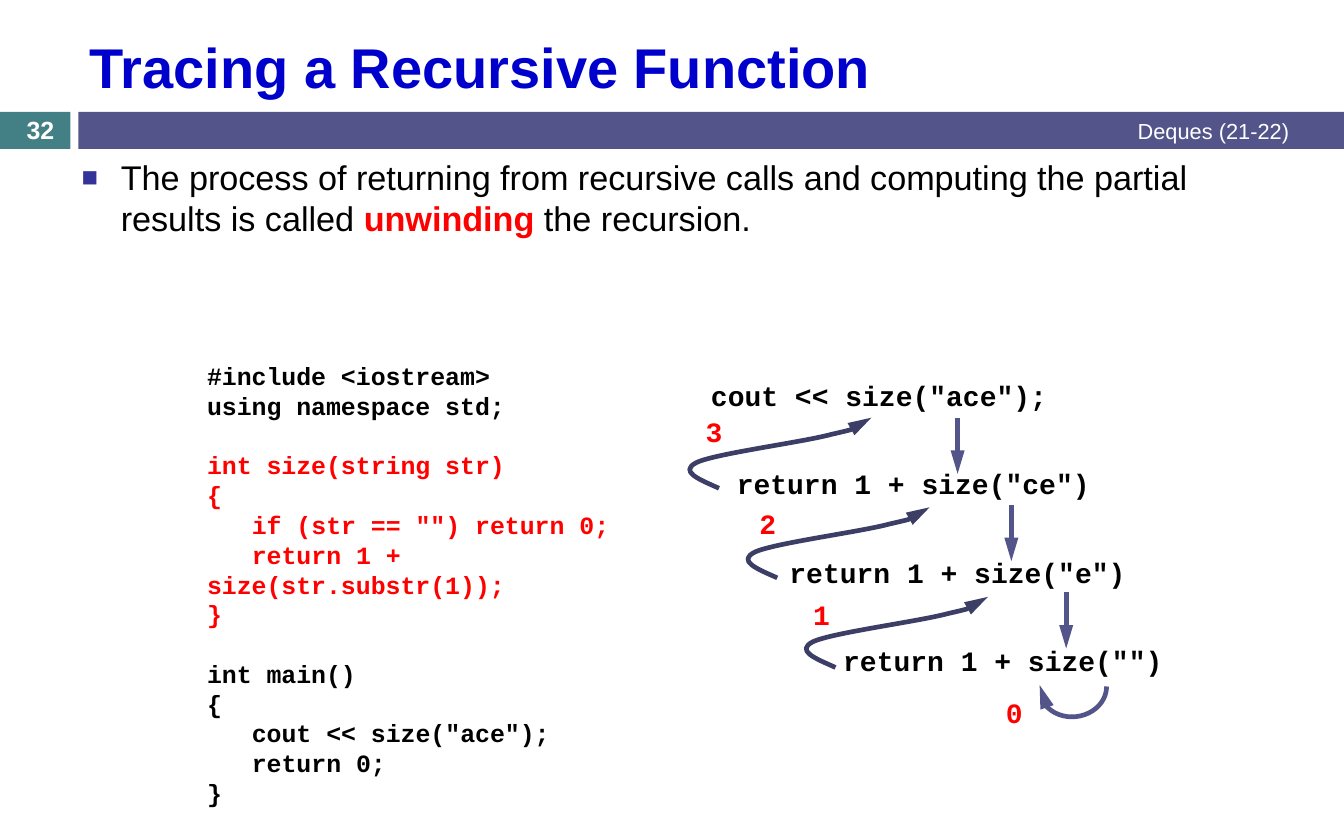
import pptx
import pptx.util
import pptx.dml.color
import pptx.enum.text
import pptx.enum.shapes
from lxml import etree
from pptx.oxml.ns import qn
from pptx.util import Inches, Pt

ALIGN = pptx.enum.text.PP_ALIGN
ANCHOR = pptx.enum.text.MSO_ANCHOR
SHAPE = pptx.enum.shapes.MSO_SHAPE
BLACK, RED, WHITE = "000000", "FF0000", "FFFFFF"
BLUE, TEAL, PURPLE, DARK_PURPLE = "0000CC", "438086", "53548A", "3D3E66"

TITLE = "Tracing a Recursive Function"
BANDS = [(0, 0.63, TEAL), (0.7, 11.3, PURPLE)]  # left, width, fill
STATEMENT = [
    ("The process of returning from recursive calls and computing the partial results is called ", BLACK, False),
    ("unwinding", RED, True),
    (" the recursion.", BLACK, False),
]
CODE_BLOCKS = [  # colour, lines as (indented, text)
    (BLACK, [(False, "#include <iostream>"), (False, "using namespace std;")]),
    (RED, [
        (False, "int size(string str)"),
        (False, "{"),
        (True, 'if (str == "") return 0;'),
        (True, "return 1 + size(str.substr(1));"),
        (False, "}"),
    ]),
    (BLACK, [
        (False, "int main()"),
        (False, "{"),
        (True, 'cout << size("ace");'),
        (True, "return 0;"),
        (False, "}"),
    ]),
]
CALLS = [  # text, left, top, width
    ('cout << size("ace");', 6.25, 3.33, 3.27),
    ('return 1 + size("ce")', 6.48, 4.12, 3.62),
    ('return 1 + size("e")', 6.95, 4.91, 3.39),
    ('return 1 + size("")', 7.43, 5.7, 3.39),
]
RESULTS = [("3", 6.07, 3.65), ("2", 6.55, 4.47), ("1", 7.03, 5.29), ("0", 8.75, 6.16)]
CALL_ARROWS = [(8.55, 3.73), (9.03, 4.51), (9.52, 5.29)]
CALL_ARROW_LENGTH = 0.5

# Return curve: start point followed by three Bezier segments
RETURN_CURVE = [
    (6.42, 4.36),
    (6.24, 4.28), (6.06, 4.21), (6.22, 4.13),
    (6.39, 4.05), (7.16, 3.95), (7.42, 3.88),
    (7.68, 3.82), (7.73, 3.78), (7.78, 3.73),
]
RETURN_STEP = (0.52, 0.8)


def color(hex_code):
    return pptx.dml.color.RGBColor.from_string(hex_code)


def add_span(para, text, name="Arial", size=18, bold=False, fill=BLACK):
    span = para.add_run()
    span.text = text
    for key, value in {"name": name, "size": Pt(size), "bold": bold}.items():
        setattr(span.font, key, value)
    span.font.color.rgb = color(fill)


def add_box(slide, left, top, width, height, anchor=ANCHOR.TOP):
    box = slide.shapes.add_textbox(Inches(left), Inches(top), Inches(width), Inches(height))
    box.text_frame.word_wrap = True
    box.text_frame.vertical_anchor = anchor
    return box.text_frame


def add_label(slide, text, place, align=ALIGN.LEFT, anchor=ANCHOR.TOP, **font):
    para = add_box(slide, *place, anchor).paragraphs[0]
    para.alignment = align
    add_span(para, text, **font)


def style_arrow(shape, fill):
    """Give a line its colour and arrowhead, and no shadow."""
    shape.line.width = Pt(3)
    shape.line.color.rgb = color(fill)
    line = shape._element.spPr.find(qn("a:ln"))
    etree.SubElement(line, qn("a:tailEnd"), type="triangle", w="med", len="lg")
    etree.SubElement(shape._element.spPr, qn("a:effectLst"))


def add_curve(slide, points, fill):
    """Draw a start point and groups of three Bezier points."""
    start, *others = [(Inches(x), Inches(y)) for x, y in points]
    builder = slide.shapes.build_freeform(*start)
    builder.add_line_segments(others, close=False)
    shape = builder.convert_to_shape()
    outline = next(shape._element.iter(qn("a:path")))
    corners = outline.findall(qn("a:lnTo"))
    for first in range(0, len(corners), 3):
        segment = etree.SubElement(outline, qn("a:cubicBezTo"))
        for corner in corners[first:first + 3]:
            segment.append(corner[0])
            outline.remove(corner)
    shape.fill.background()
    style_arrow(shape, fill)


def add_statement(slide):
    para = add_box(slide, 0.63, 1.35, 10.99, 5.86).paragraphs[0]
    for text, fill, bold in STATEMENT:
        add_span(para, text, size=22, bold=bold, fill=fill)
    props = para._p.get_or_add_pPr()
    props.set("marL", str(Inches(0.35)))
    props.set("indent", str(-Inches(0.35)))
    bullet_color = etree.SubElement(props, qn("a:buClr"))
    etree.SubElement(bullet_color, qn("a:srgbClr"), val="333399")
    etree.SubElement(props, qn("a:buSzPct"), val="80000")
    etree.SubElement(props, qn("a:buFont"), typeface="Arial")
    etree.SubElement(props, qn("a:buChar"), char="■")


def add_code(slide):
    frame = add_box(slide, 1.75, 3.17, 4.69, 3.87)
    para = frame.paragraphs[0]
    for block, (fill, lines) in enumerate(CODE_BLOCKS):
        for row, (indented, text) in enumerate(lines):
            if block or row:
                para = frame.add_paragraph()
            if block and not row:
                para.space_before = Pt(19)
            if indented:
                para._p.get_or_add_pPr().set("indent", str(Inches(0.4)))
            add_span(para, text, "Courier New", 16, True, fill)


def main():
    deck = pptx.Presentation()
    deck.slide_width, deck.slide_height = Inches(12), Inches(7.5)
    slide = deck.slides.add_slide(deck.slide_layouts[5])

    for left, width, fill in BANDS:
        band = slide.shapes.add_shape(SHAPE.RECTANGLE, Inches(left), Inches(1), Inches(width), Inches(0.33))
        band.shadow.inherit = False
        band.fill.solid()
        band.fill.fore_color.rgb = color(fill)
        band.line.fill.background()

    title = slide.shapes.title
    place = {"left": 0.7, "top": 0.19, "width": 10.91, "height": 0.8}
    for key, value in place.items():
        setattr(title, key, Inches(value))
    title.text_frame.vertical_anchor = ANCHOR.MIDDLE
    para = title.text_frame.paragraphs[0]
    para.alignment = ALIGN.LEFT
    add_span(para, TITLE, size=36, bold=True, fill=BLUE)

    add_statement(slide)
    add_label(slide, "Deques (21-22)", (4.5, 0.99, 7.11, 0.35), ALIGN.RIGHT, ANCHOR.MIDDLE, size=14, fill=WHITE)
    add_label(slide, "32", (0, 1.01, 0.72, 0.3), ALIGN.CENTER, ANCHOR.MIDDLE, size=16, bold=True, fill=WHITE)

    for level in range(3):
        shift_x, shift_y = (level * step for step in RETURN_STEP)
        add_curve(slide, [(x + shift_x, y + shift_y) for x, y in RETURN_CURVE], DARK_PURPLE)
    for text, left, top in RESULTS:
        add_label(slide, text, (left, top, 0.61, 0.4), ALIGN.CENTER, name="Courier New", bold=True, fill=RED)
    for text, left, top, width in CALLS:
        add_label(slide, text, (left, top, width, 0.4), name="Courier New", bold=True)
    for x, top in CALL_ARROWS:
        arrow = slide.shapes.add_connector(
            pptx.enum.shapes.MSO_CONNECTOR.STRAIGHT,
            Inches(x), Inches(top), Inches(x), Inches(top + CALL_ARROW_LENGTH))
        style_arrow(arrow, PURPLE)

    base_return = slide.shapes.add_shape(SHAPE.ARC, Inches(9.32), Inches(5.84), Inches(0.52), Inches(0.6))
    base_return.rotation = 83.7
    base_return.adjustments[0], base_return.adjustments[1] = 164.56, 60.35
    base_return.fill.background()
    style_arrow(base_return, PURPLE)

    add_code(slide)
    deck.save("out.pptx")


if __name__ == "__main__":
    main()
